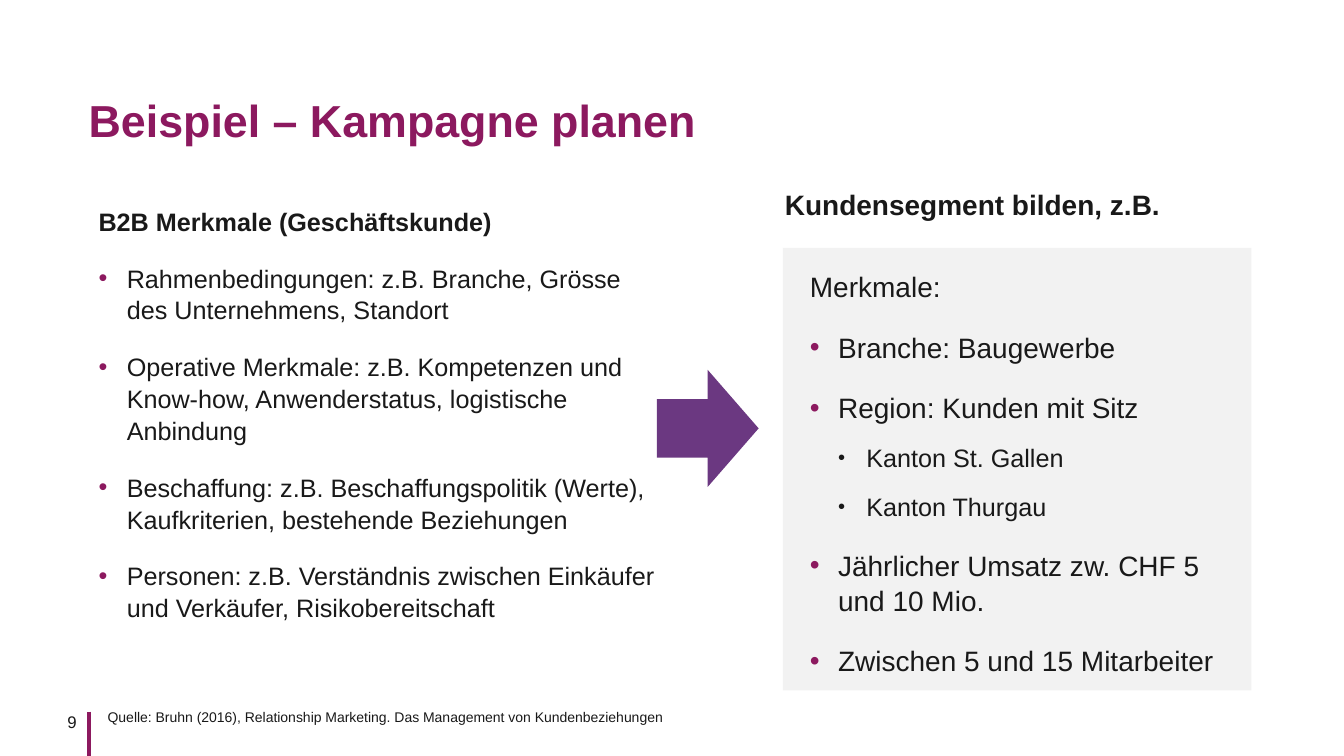
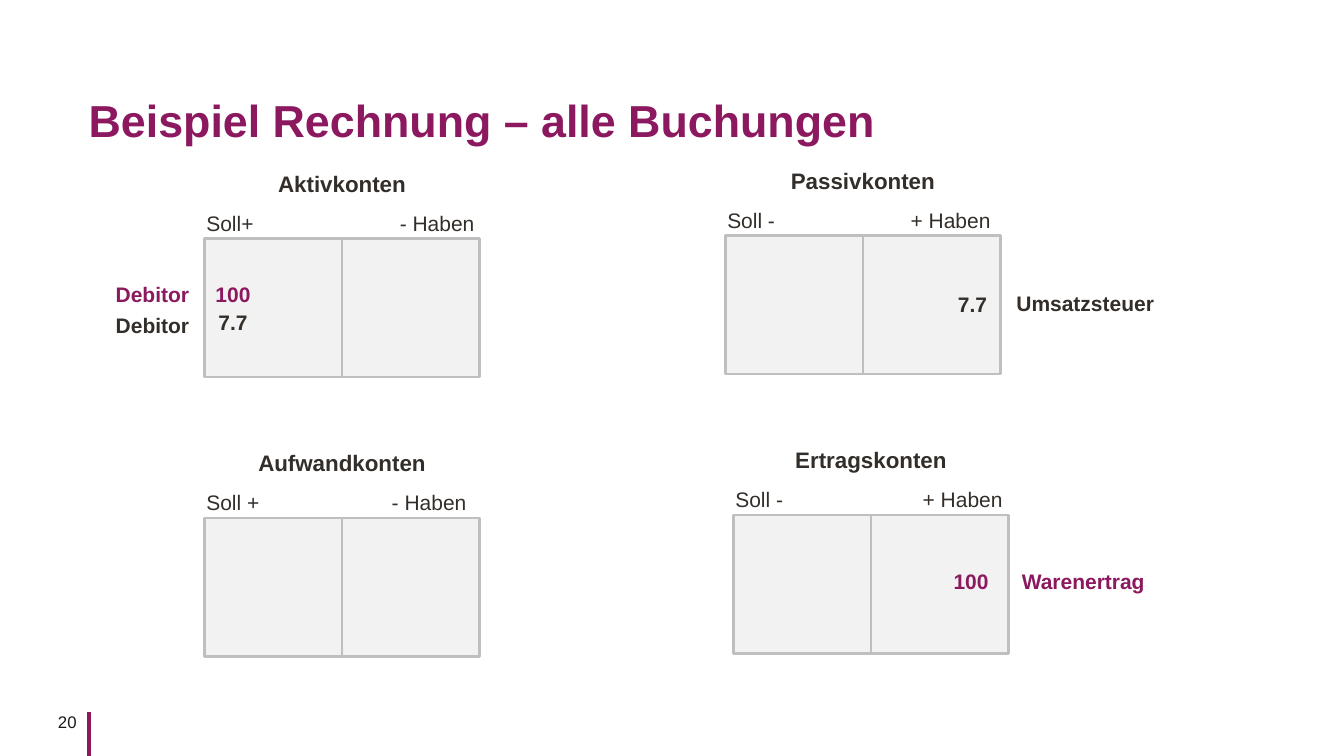
from lxml.etree import SubElement
from pptx import Presentation
from pptx.dml.color import RGBColor
from pptx.enum.shapes import MSO_CONNECTOR, MSO_SHAPE
from pptx.enum.text import MSO_ANCHOR, PP_ALIGN
from pptx.oxml.ns import qn
from pptx.util import Inches, Pt

FONT = "Arial"
COLORS = {
    "plum": "8C195F", "violet": "6B3881", "black": "191919",
    "brown": "332E29", "pale": "F2F2F2", "gray": "BFBFBF",
}
INSETS = (0.1, 0.05, 0.1, 0.05)
STEP = 0.28

# Paragraph styles: bullet color and size in percent, level, space before
HEAD = {"bold": True}
POINT = {"bullet": ("plum", 100), "level": 0, "before": 18}
SUB = {"bullet": ("black", 80), "level": 1, "before": 12, "size": 18}

TRAITS = [
    ("B2B Merkmale (Geschäftskunde)", HEAD),
    ("Rahmenbedingungen: z.B. Branche, Grösse des Unternehmens, Standort", POINT),
    ("Operative Merkmale: z.B. Kompetenzen und Know-how, "
     "Anwenderstatus, logistische Anbindung", POINT),
    ("Beschaffung: z.B. Beschaffungspolitik (Werte), "
     "Kaufkriterien, bestehende Beziehungen", POINT),
    ("Personen: z.B. Verständnis zwischen Einkäufer und Verkäufer, "
     "Risikobereitschaft", POINT),
]
SEGMENT = [
    ("Merkmale:", {}),
    ("Branche: Baugewerbe", POINT),
    ("Region: Kunden mit Sitz", POINT),
    ("Kanton St. Gallen", SUB),
    ("Kanton Thurgau", SUB),
    ("Jährlicher Umsatz zw. CHF 5 und 10 Mio.", POINT),
    ("Zwischen 5 und 15 Mitarbeiter", POINT),
]
SOURCE = ("Quelle: Bruhn (2016), Relationship Marketing. "
          "Das Management von Kundenbeziehungen")

# Name, left, top, debit label, credit label, width of credit label
ACCOUNTS = [
    ("Aktivkonten", 2.03, 2.37, "Soll+", "- Haben", 0.96),
    ("Passivkonten", 7.2, 2.34, "Soll -", "+ Haben", 1.06),
    ("Aufwandkonten", 2.03, 5.14, "Soll +", "- Haben", 1.04),
    ("Ertragskonten", 7.28, 5.11, "Soll -", "+ Haben", 1.02),
]
# Text, left, top, width, color, alignment
ENTRIES = [
    ("Debitor", 1.05, 2.74, 1.13, "plum", "left"),
    ("100", 2.04, 2.74, 0.7, "plum", "left"),
    ("Debitor", 1.05, 3.05, 1.02, "brown", "left"),
    ("7.7", 2.07, 3.02, 0.62, "brown", "left"),
    ("7.7", 9.41, 2.84, 0.62, "brown", "left"),
    ("Umsatzsteuer", 9.99, 2.83, 1.76, "brown", "left"),
    ("100", 9.32, 5.59, 0.59, "plum", "right"),
    ("Warenertrag", 9.26, 5.59, 2.2, "plum", "right"),
]
ALIGN = {"left": PP_ALIGN.LEFT, "center": PP_ALIGN.CENTER, "right": PP_ALIGN.RIGHT}


def rgb(name):
    return RGBColor.from_string(COLORS[name])


def mark(para, color, percent, level):
    """Give a paragraph a hanging bullet."""
    props = para._p.get_or_add_pPr()
    props.set("marL", str(Inches(STEP * (level + 1))))
    props.set("indent", str(-Inches(STEP)))
    tint = SubElement(props, qn("a:buClr"))
    SubElement(tint, qn("a:srgbClr"), val=COLORS[color])
    SubElement(props, qn("a:buSzPct"), val=str(percent * 1000))
    SubElement(props, qn("a:buFont"), typeface=FONT)
    SubElement(props, qn("a:buChar"), char="•")
    para.level = level


def write(slide, text, box, size=15, color="brown", bold=False, align="left",
          spacing=None, insets=INSETS, anchor=MSO_ANCHOR.TOP, wrap=True):
    """Place a string, or a list of (string, style) paragraphs, in a text box."""
    frame = slide.shapes.add_textbox(*map(Inches, box)).text_frame
    frame.word_wrap = wrap
    frame.vertical_anchor = anchor
    (frame.margin_left, frame.margin_top,
     frame.margin_right, frame.margin_bottom) = map(Inches, insets)
    items = [(text, {})] if isinstance(text, str) else text
    for i, (line, style) in enumerate(items):
        para = frame.add_paragraph() if i else frame.paragraphs[0]
        if "bullet" in style:
            mark(para, *style["bullet"], style["level"])
        para.alignment = ALIGN[align]
        if spacing:
            para.line_spacing = spacing
        if "before" in style:
            para.space_before = Pt(style["before"])
        run = para.add_run()
        run.text = line
        font = run.font
        font.name = FONT
        font.size = Pt(style.get("size", size))
        font.bold = style.get("bold", bold)
        font.color.rgb = rgb(color)


def shape(slide, kind, box, fill, line=None):
    item = slide.shapes.add_shape(kind, *map(Inches, box))
    item.shadow.inherit = False
    item.fill.solid()
    item.fill.fore_color.rgb = rgb(fill)
    if line:
        item.line.color.rgb = rgb(line)
        item.line.width = Pt(2)
    else:
        item.line.fill.background()
    return item


def rule(slide, x, top, bottom, color, width):
    """Draw an upright line."""
    line = slide.shapes.add_connector(
        MSO_CONNECTOR.STRAIGHT, *map(Inches, (x, top, x, bottom)))
    line.line.color.rgb = rgb(color)
    line.line.width = Pt(width)
    SubElement(line._element.spPr, qn("a:effectLst"))
    return line


def start(deck, title, number):
    """Add a slide with its title, page number and footer line."""
    slide = deck.slides.add_slide(deck.slide_layouts[6])
    rule(slide, 0.88, 7.06, 7.5, "plum", 3)
    write(slide, str(number), (0.29, 7.06, 0.59, 0.2), size=12, color="black",
          align="right", insets=(0, 0, 0.12, 0))
    write(slide, title, (0.88, 0.76, 12.09, 0.75), size=32, color="plum", bold=True,
          spacing=1.2, insets=(0, 0, 0, 0), anchor=MSO_ANCHOR.MIDDLE)
    return slide


def account(slide, name, x, y, debit, credit, width):
    wide, high = 2.73, 1.37
    box = shape(slide, MSO_SHAPE.RECTANGLE, (x, y, wide, high), "pale", "gray")
    split = rule(slide, x + wide / 2, y, y + high, "gray", 1.5)
    split.begin_connect(box, 0)
    split.end_connect(box, 2)
    write(slide, name, (x, y - 0.73, wide, 0.37), size=16, bold=True, align="center")
    write(slide, debit, (x - 0.08, y - 0.33, 0.82, 0.35))
    write(slide, credit, (x + 2.8 - width, y - 0.33, width, 0.35))


def campaign(deck):
    slide = start(deck, "Beispiel – Kampagne planen", 9)
    write(slide, TRAITS, (0.88, 1.98, 5.78, 4.77), size=18, color="black", spacing=1.05)
    write(slide, SOURCE, (0.97, 6.98, 7.39, 0.27), size=10, color="black")
    write(slide, "Kundensegment bilden, z.B.", (7.67, 1.8, 3.98, 0.5), size=20,
          color="black", bold=True, spacing=1.05, insets=(0.12, 0.04, 0.12, 0.12))
    shape(slide, MSO_SHAPE.RECTANGLE, (7.77, 2.46, 4.65, 4.39), "pale")
    write(slide, SEGMENT, (7.94, 2.61, 4.21, 4.15), size=20, color="black", spacing=1.05)
    shape(slide, MSO_SHAPE.RIGHT_ARROW, (6.52, 3.67, 1.01, 1.16), "violet")


def bookings(deck):
    slide = start(deck, "Beispiel Rechnung – alle Buchungen", 20)
    for item in ACCOUNTS:
        account(slide, *item)
    for text, x, y, width, color, align in ENTRIES:
        write(slide, text, (x, y, width, 0.35), color=color, bold=True, align=align)


def main():
    deck = Presentation()
    deck.slide_width, deck.slide_height = Inches(13.34), Inches(7.5)
    campaign(deck)
    bookings(deck)
    deck.save("out.pptx")


if __name__ == "__main__":
    main()
